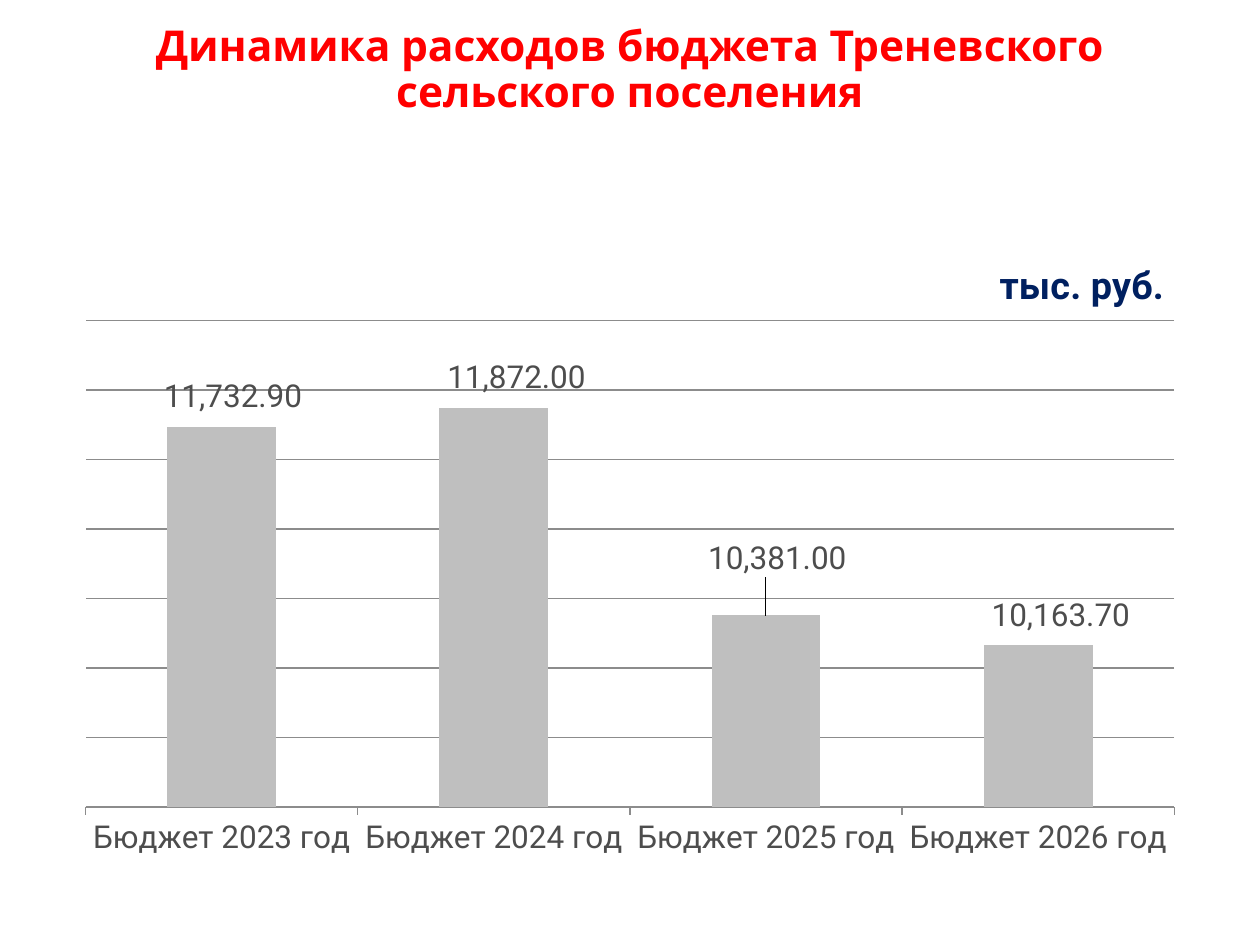
from lxml.etree import SubElement
from pptx import Presentation
from pptx.chart.data import CategoryChartData
from pptx.dml.color import RGBColor
from pptx.enum.chart import XL_CHART_TYPE as ChartType
from pptx.enum.chart import XL_LABEL_POSITION as LabelPosition
from pptx.enum.chart import XL_TICK_LABEL_POSITION as TickLabels
from pptx.enum.chart import XL_TICK_MARK as TickMark
from pptx.enum.text import MSO_ANCHOR as Anchor
from pptx.enum.text import PP_ALIGN as Align
from pptx.oxml.ns import qn
from pptx.util import Cm, Pt

RED = RGBColor(0xFF, 0x00, 0x00)
NAVY = RGBColor(0x00, 0x20, 0x60)
DARK_GRAY = RGBColor(0x4D, 0x4D, 0x4D)
GRID_GRAY = RGBColor(0x8C, 0x8C, 0x8C)
BAR_GRAY = RGBColor(0xBF, 0xBF, 0xBF)

HEADING = "Динамика расходов бюджета Треневского сельского поселения"
UNITS = "тыс. руб."
NUMBER_FORMAT = "#,##0.00"
EXPENSES = [
    (2023, 11732.9, (0.01, -0.01)),
    (2024, 11872, (0.02, -0.01)),
    (2025, 10381, (0.01, -0.05)),
    (2026, 10163.7, (0.02, -0.01)),
]


def write(frame, text, *, size, color, font, bold=False, align=Align.CENTER, spacing=None):
    paragraph = frame.paragraphs[0]
    paragraph.alignment = align
    paragraph.line_spacing = spacing
    run = paragraph.add_run()
    run.text = text
    run.font.size = Pt(size)
    run.font.name = font
    run.font.bold = bold
    run.font.color.rgb = color


def manual_layout(layout, **settings):
    for child in list(layout):
        layout.remove(child)
    manual = SubElement(layout, qn("c:manualLayout"))
    for tag, value in settings.items():
        SubElement(manual, qn(f"c:{tag}")).set("val", str(value))


def new_layout(before):
    layout = before.makeelement(qn("c:layout"), {})
    before.addprevious(layout)
    return layout


def style_font(font):
    font.size = Pt(18)
    font.name = "Roboto"
    font.color.rgb = DARK_GRAY


def style_axes(chart):
    years = chart.category_axis
    years.major_tick_mark = TickMark.OUTSIDE
    years.format.line.color.rgb = GRID_GRAY
    style_font(years.tick_labels.font)
    amounts = chart.value_axis
    amounts.minimum_scale = 9000
    amounts.maximum_scale = 12500
    amounts.major_unit = 500
    amounts.tick_label_position = TickLabels.NONE
    amounts.major_tick_mark = TickMark.NONE
    amounts.format.line.fill.background()
    amounts.major_gridlines.format.line.color.rgb = GRID_GRAY


def style_bars(plot):
    plot.gap_width = 150
    plot.vary_by_categories = False
    bars = plot.series[0]
    bars.format.fill.solid()
    bars.format.fill.fore_color.rgb = BAR_GRAY
    labels = bars.data_labels
    labels.show_value = True
    labels.number_format = NUMBER_FORMAT
    labels.number_format_is_linked = False
    labels.position = LabelPosition.OUTSIDE_END
    style_font(labels.font)
    for index, (_, _, (dx, dy)) in enumerate(EXPENSES):
        label = bars.points[index].data_label
        style_font(label.font)
        label.position = LabelPosition.OUTSIDE_END
    for label, (_, _, (dx, dy)) in zip(labels._element.findall(qn("c:dLbl")), EXPENSES):
        manual_layout(new_layout(label[1]), x=dx, y=dy)


def add_expense_chart(slide):
    data = CategoryChartData(number_format=NUMBER_FORMAT)
    data.categories = [f"Бюджет {year} год" for year, _, _ in EXPENSES]
    data.add_series("Series 1", [amount for _, amount, _ in EXPENSES])
    chart = slide.shapes.add_chart(
        ChartType.COLUMN_CLUSTERED, Cm(1.27), Cm(4.45), Cm(22.86), Cm(13.08), data
    ).chart
    style_font(chart.font)
    chart.has_legend = False
    units = chart.chart_title
    write(units.text_frame, UNITS, size=21.6, color=NAVY, font="Roboto", bold=True)
    units.include_in_layout = False
    manual_layout(
        new_layout(units._element.find(qn("c:overlay"))),
        xMode="edge", yMode="edge", x=0.82, y=0.05,
    )
    style_axes(chart)
    style_bars(chart.plots[0])
    plot_area = chart._chartSpace.chart.plotArea
    layout = plot_area.find(qn("c:layout"))
    manual_layout(
        new_layout(plot_area[0]) if layout is None else layout,
        layoutTarget="inner", xMode="edge", yMode="edge", x=0.02, y=0.154, w=0.96, h=0.75,
    )


def main():
    deck = Presentation()
    deck.slide_width, deck.slide_height = Cm(25.4), Cm(19.05)
    slide = deck.slides.add_slide(deck.slide_layouts[6])
    heading = slide.shapes.add_textbox(Cm(2.54), Cm(0.43), Cm(20.32), Cm(1.98)).text_frame
    heading.word_wrap = True
    heading.vertical_anchor = Anchor.MIDDLE
    write(heading, HEADING, size=24.3, color=RED, font="Karla", bold=True, spacing=0.9)
    add_expense_chart(slide)
    deck.save("out.pptx")


if __name__ == "__main__":
    main()
